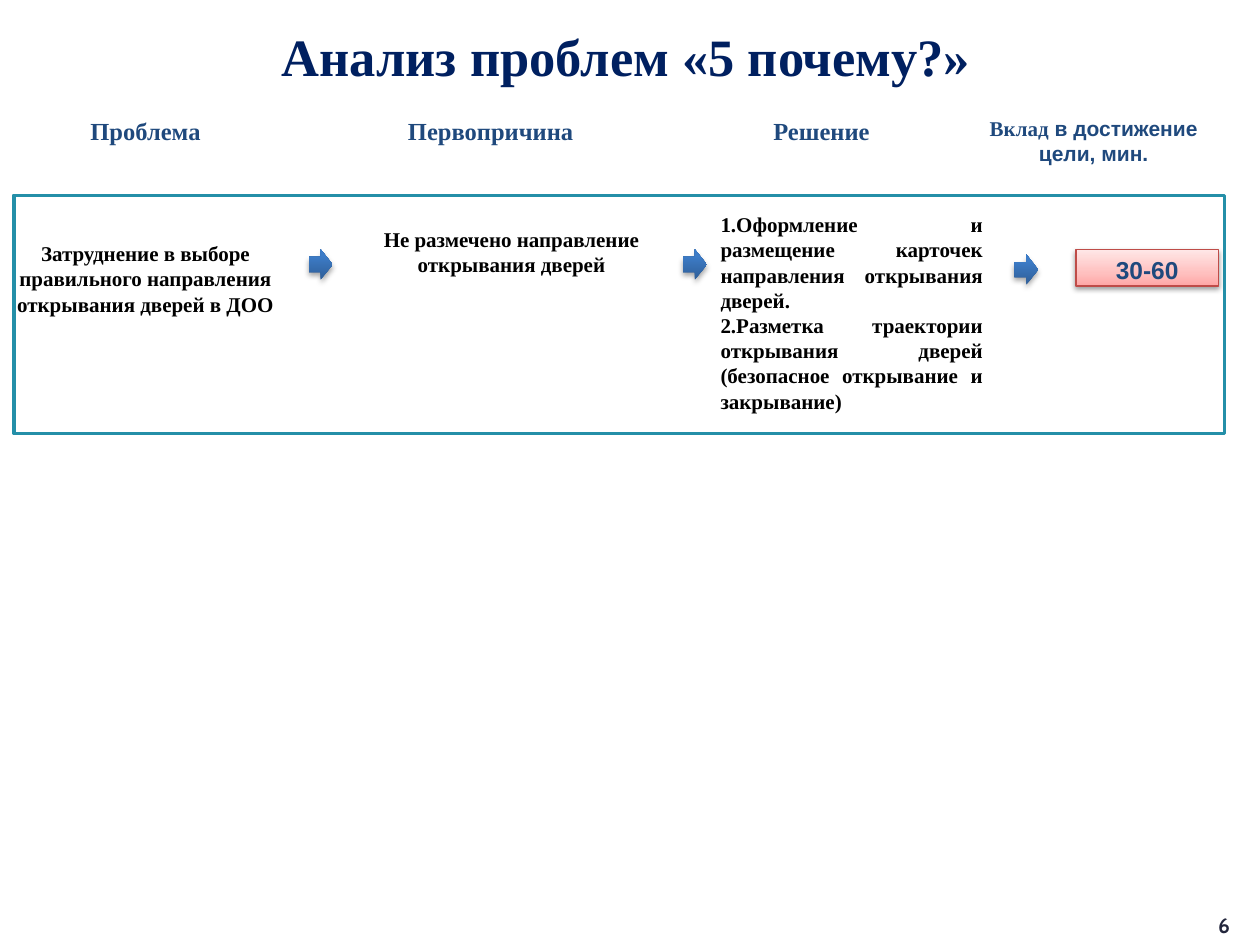
from lxml.etree import SubElement
from pptx import Presentation
from pptx.dml.color import RGBColor
from pptx.enum.shapes import MSO_SHAPE
from pptx.enum.text import MSO_ANCHOR, MSO_AUTO_SIZE, PP_ALIGN
from pptx.oxml.ns import qn
from pptx.util import Inches, Pt

HUES = {
    "title": "002060",
    "head": "1F497D",
    "body": "000000",
    "page": "23263C",
    "frame": "248FA8",
    "badge": "BF4C48",
}
PINK = [(0, "FFA6A5"), (35, "FFC0BF"), (100, "FFE7E7")]
BLUE = [(0, "2F5F99"), (80, "3D7CC7"), (100, "3A7CCB")]
TIMES = "Times New Roman"
PLAIN = (0.1, 0.05, 0.1, 0.05)
HEAD = (0.1, 0.05, 0.1, 0.01)
CELL = (0.1, 0.09, 0.1, 0.01)


class Board:
    def __init__(self, deck):
        self.slide = deck.slides.add_slide(deck.slide_layouts[6])
        self.style = {"name": TIMES, "bold": True}

    def hue(self, key):
        return RGBColor.from_string(HUES[key])

    def label(self, shape, paras, size, hue, pad=PLAIN, anchor=MSO_ANCHOR.MIDDLE,
              align=PP_ALIGN.CENTER, space=None):
        frame = shape.text_frame
        form = {"word_wrap": True, "auto_size": MSO_AUTO_SIZE.NONE,
                "vertical_anchor": anchor}
        sides = ("left", "top", "right", "bottom")
        form.update({f"margin_{side}": Inches(gap) for side, gap in zip(sides, pad)})
        for key, value in form.items():
            setattr(frame, key, value)
        for spot, runs in enumerate(paras):
            para = frame.add_paragraph() if spot else frame.paragraphs[0]
            para.alignment = align
            if space:
                para.line_spacing = space
            for words, face in runs:
                run = para.add_run()
                run.text = words
                for key, value in {**self.style, "name": face, "size": Pt(size)}.items():
                    setattr(run.font, key, value)
                run.font.color.rgb = self.hue(hue)

    def text(self, box, paras, size, hue, **form):
        shape = self.slide.shapes.add_textbox(*map(Inches, box))
        self.label(shape, paras, size, hue, **form)

    def shape(self, kind, box, line=None, width=1):
        shape = self.slide.shapes.add_shape(kind, *map(Inches, box))
        shape.shadow.inherit = False
        shape.fill.background()
        if line:
            shape.line.color.rgb = self.hue(line)
            shape.line.width = Pt(width)
        else:
            shape.line.fill.background()
        return shape

    def blend(self, shape, stops):
        shape.fill.gradient()
        shape.fill.gradient_angle = 90
        group = shape.element.spPr.find(".//" + qn("a:gsLst"))
        for stop in list(group):
            group.remove(stop)
        for place, tone in stops:
            stop = SubElement(group, qn("a:gs"), pos=str(place * 1000))
            SubElement(stop, qn("a:srgbClr"), val=tone)

    def shade(self, shape, dist, alpha):
        group = shape.element.spPr.find(qn("a:effectLst"))
        outer = SubElement(group, qn("a:outerShdw"), blurRad=str(Pt(3.1)),
                           dist=str(Pt(dist)), dir="5400000", rotWithShape="0")
        tone = SubElement(outer, qn("a:srgbClr"), val="000000")
        SubElement(tone, qn("a:alpha"), val=str(alpha * 1000))

    def arrow(self, left, top):
        shape = self.shape(MSO_SHAPE.RIGHT_ARROW, (left, top, 0.19, 0.24))
        self.blend(shape, BLUE)
        self.shade(shape, 1.8, 35)

    def badge(self, box, words):
        shape = self.shape(MSO_SHAPE.RECTANGLE, box, "badge", 0.75)
        self.blend(shape, PINK)
        self.shade(shape, 1.6, 38)
        self.label(shape, [[(words, "Arial")]], 14, "head", pad=CELL, space=0.8)


def main():
    deck = Presentation()
    deck.slide_width, deck.slide_height = Inches(10), Inches(7.5)
    board = Board(deck)

    board.text((0.22, 0.21, 9.5, 0.46), [[("Анализ проблем «5 почему?»", TIMES)]],
               30, "title")

    heads = [
        (0.24, 1.83, 0.3, 14, [("Проблема", TIMES)]),
        (2.98, 1.83, 0.3, 14, [("Первопричина", TIMES)]),
        (5.65, 1.74, 0.3, 14, [("Решение", TIMES)]),
        (7.69, 1.98, 0.47, 12, [("Вклад", TIMES), (" в достижение цели, мин.", "Arial")]),
    ]
    for left, width, height, size, runs in heads:
        board.text((left, 0.87, width, height), [runs], size, "head",
                   pad=HEAD, anchor=MSO_ANCHOR.TOP)

    board.shape(MSO_SHAPE.RECTANGLE, (0.11, 1.55, 9.61, 1.89), "frame", 2)

    cells = [
        ((0, 1.82, 2.31, 0.91), MSO_ANCHOR.TOP, PP_ALIGN.CENTER,
         ["Затруднение в выборе правильного направления открывания дверей в ДОО"]),
        ((2.8, 1.7, 2.52, 0.51), MSO_ANCHOR.MIDDLE, PP_ALIGN.CENTER,
         ["Не размечено направление открывания дверей"]),
        ((5.62, 1.58, 2.28, 1.72), MSO_ANCHOR.MIDDLE, PP_ALIGN.JUSTIFY,
         ["1.Оформление и размещение карточек направления открывания дверей.",
          "2.Разметка траектории открывания дверей (безопасное открывание и закрывание)"]),
    ]
    for box, anchor, align, lines in cells:
        board.text(box, [[(line, TIMES)] for line in lines], 12, "body",
                   pad=CELL, anchor=anchor, align=align)

    for left, top in [(2.45, 1.98), (5.42, 1.98), (8.05, 2.02)]:
        board.arrow(left, top)
    board.badge((8.54, 1.98, 1.13, 0.29), "30-60")
    board.text((9.47, 7.19, 0.49, 0.31), [[("6", "Cabin")]], 12, "page")

    deck.save("out.pptx")


if __name__ == "__main__":
    main()
